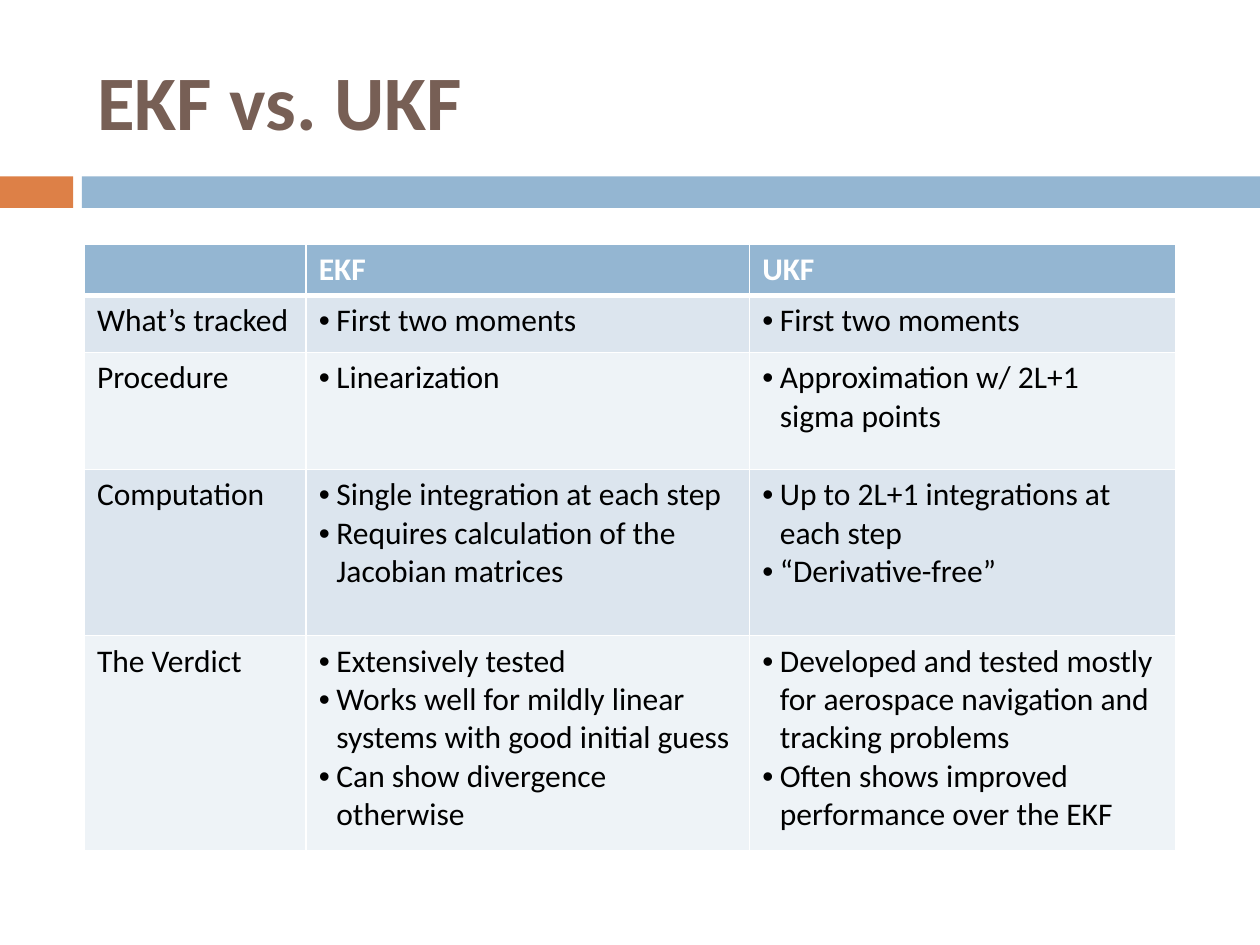
import dataclasses
import typing

import pptx
import pptx.dml.color
import pptx.enum.shapes
import pptx.enum.text
import pptx.oxml
import pptx.oxml.ns
import pptx.util

Inches = pptx.util.Inches
Pt = pptx.util.Pt
RGB = pptx.dml.color.RGBColor.from_string

SLIDE_W, SLIDE_H = 10, 7.5


@dataclasses.dataclass(frozen=True)
class Theme:
    font: str = "Calibri"
    title_size: float = 44
    table_size: float = 18
    title: str = "775F55"
    accent: str = "DD8047"
    header: str = "94B6D2"
    bands: tuple[str, str] = ("DCE5EE", "EEF3F7")
    text: str = "000000"
    white: str = "FFFFFF"
    rule: float = 1
    header_rule: float = 3
    hang: float = 0.14


THEME = Theme()


@dataclasses.dataclass(frozen=True)
class Bar:
    """A band segment, from one share of the slide's width to another."""
    start: float
    end: float
    color: str


@dataclasses.dataclass(frozen=True)
class Topic:
    """A comparison row; a line break inside a point is written \\v."""
    label: str
    ekf: tuple[str, ...]
    ukf: tuple[str, ...]
    height: float


BARS = [Bar(0, 0.058, THEME.accent), Bar(0.065, 1, THEME.header)]
BAR_TOP, BAR_HEIGHT = 1.4 / SLIDE_H, 0.25 / SLIDE_H

COLUMNS = {"": 1.76, "EKF": 3.52, "UKF": 3.38}
HEADER_HEIGHT = 0.4
TOPICS = [
    Topic("What’s tracked", ("First two moments",), ("First two moments",), 0.45),
    Topic("Procedure", ("Linearization",),
          ("Approximation w/ 2L+1\vsigma points",), 0.93),
    Topic("Computation",
          ("Single integration at each step",
           "Requires calculation of the\vJacobian matrices"),
          ("Up to 2L+1 integrations at\veach step", "“Derivative-free”"), 1.32),
    Topic("The Verdict",
          ("Extensively tested",
           "Works well for mildly linear\vsystems with good initial guess",
           "Can show divergence otherwise"),
          ("Developed and tested mostly\vfor aerospace navigation and\vtracking problems",
           "Often shows improved\vperformance over the EKF"), 1.71),
]


def style(font: typing.Any, color: str, size: float, bold: bool) -> None:
    font_format = {"name": THEME.font, "size": Pt(size), "bold": bold}
    for name, value in font_format.items():
        setattr(font, name, value)
    font.color.rgb = RGB(color)


def draw_bar(slide: typing.Any, bar: Bar) -> None:
    segment = slide.shapes.add_shape(
        pptx.enum.shapes.MSO_SHAPE.RECTANGLE,
        Inches(bar.start * SLIDE_W), Inches(BAR_TOP * SLIDE_H),
        Inches((bar.end - bar.start) * SLIDE_W), Inches(BAR_HEIGHT * SLIDE_H))
    segment.shadow.inherit = False
    segment.fill.solid()
    segment.fill.fore_color.rgb = RGB(bar.color)
    segment.line.fill.background()


def add_bullet(paragraph: typing.Any) -> None:
    properties = paragraph._p.get_or_add_pPr()
    properties.set("marL", str(Inches(THEME.hang)))
    properties.set("indent", str(-Inches(THEME.hang)))
    namespace = pptx.oxml.ns.nsdecls("a")
    for mark in ('buFont {} typeface="Arial"', 'buChar {} char="•"'):
        properties.append(pptx.oxml.parse_xml(f"<a:{mark.format(namespace)}/>"))


def set_borders(cell: typing.Any, top: float, bottom: float) -> None:
    properties = cell._tc.get_or_add_tcPr()
    widths = {"lnL": THEME.rule, "lnR": THEME.rule, "lnT": top, "lnB": bottom}
    for side, width in widths.items():
        properties.append(pptx.oxml.parse_xml(
            f'<a:{side} {pptx.oxml.ns.nsdecls("a")} w="{Pt(width)}">'
            f'<a:solidFill><a:srgbClr val="{THEME.white}"/></a:solidFill></a:{side}>'))


def fill_cell(cell: typing.Any, points: tuple[str, ...], row: int, bulleted: bool) -> None:
    is_header = row == 0
    set_borders(cell,
                top=THEME.header_rule if row == 1 else THEME.rule,
                bottom=THEME.header_rule if is_header else THEME.rule)
    cell.fill.solid()
    cell.fill.fore_color.rgb = RGB(
        THEME.header if is_header else THEME.bands[(row - 1) % 2])
    cell.text = "\n".join(points)
    for paragraph in cell.text_frame.paragraphs:
        if bulleted:
            add_bullet(paragraph)
        for run in paragraph.runs:
            style(run.font, THEME.white if is_header else THEME.text,
                  THEME.table_size, is_header)


def draw_comparison(slide: typing.Any) -> None:
    heights = [HEADER_HEIGHT] + [topic.height for topic in TOPICS]
    width = sum(COLUMNS.values())
    comparison = slide.shapes.add_table(
        len(heights), len(COLUMNS), Inches((SLIDE_W - width) / 2), Inches(1.94),
        Inches(width), Inches(sum(heights))).table
    for column, column_width in zip(comparison.columns, COLUMNS.values()):
        column.width = Inches(column_width)
    for row, height in zip(comparison.rows, heights):
        row.height = Inches(height)

    contents = [[(heading,) for heading in COLUMNS]]
    contents += [[(topic.label,), topic.ekf, topic.ukf] for topic in TOPICS]
    for r, entries in enumerate(contents):
        for c, points in enumerate(entries):
            fill_cell(comparison.cell(r, c), points, r, bulleted=r > 0 and c > 0)


def draw_title(slide: typing.Any, wording: str) -> None:
    heading = slide.shapes.title
    place = {"left": 0.67, "top": 0.25, "width": 8.92, "height": 1.08}
    for name, value in place.items():
        setattr(heading, name, Inches(value))
    heading.text_frame.text = wording
    heading.text_frame.vertical_anchor = pptx.enum.text.MSO_ANCHOR.MIDDLE
    line = heading.text_frame.paragraphs[0]
    line.alignment = pptx.enum.text.PP_ALIGN.LEFT
    style(line.runs[0].font, THEME.title, THEME.title_size, True)


def main() -> None:
    deck = pptx.Presentation()
    deck.slide_width, deck.slide_height = Inches(SLIDE_W), Inches(SLIDE_H)
    slide = deck.slides.add_slide(deck.slide_layouts.get_by_name("Title Only"))

    # Title and the band below it
    draw_title(slide, "EKF vs. UKF")
    for bar in BARS:
        draw_bar(slide, bar)

    # Side-by-side table
    draw_comparison(slide)
    deck.save("out.pptx")


if __name__ == "__main__":
    main()
